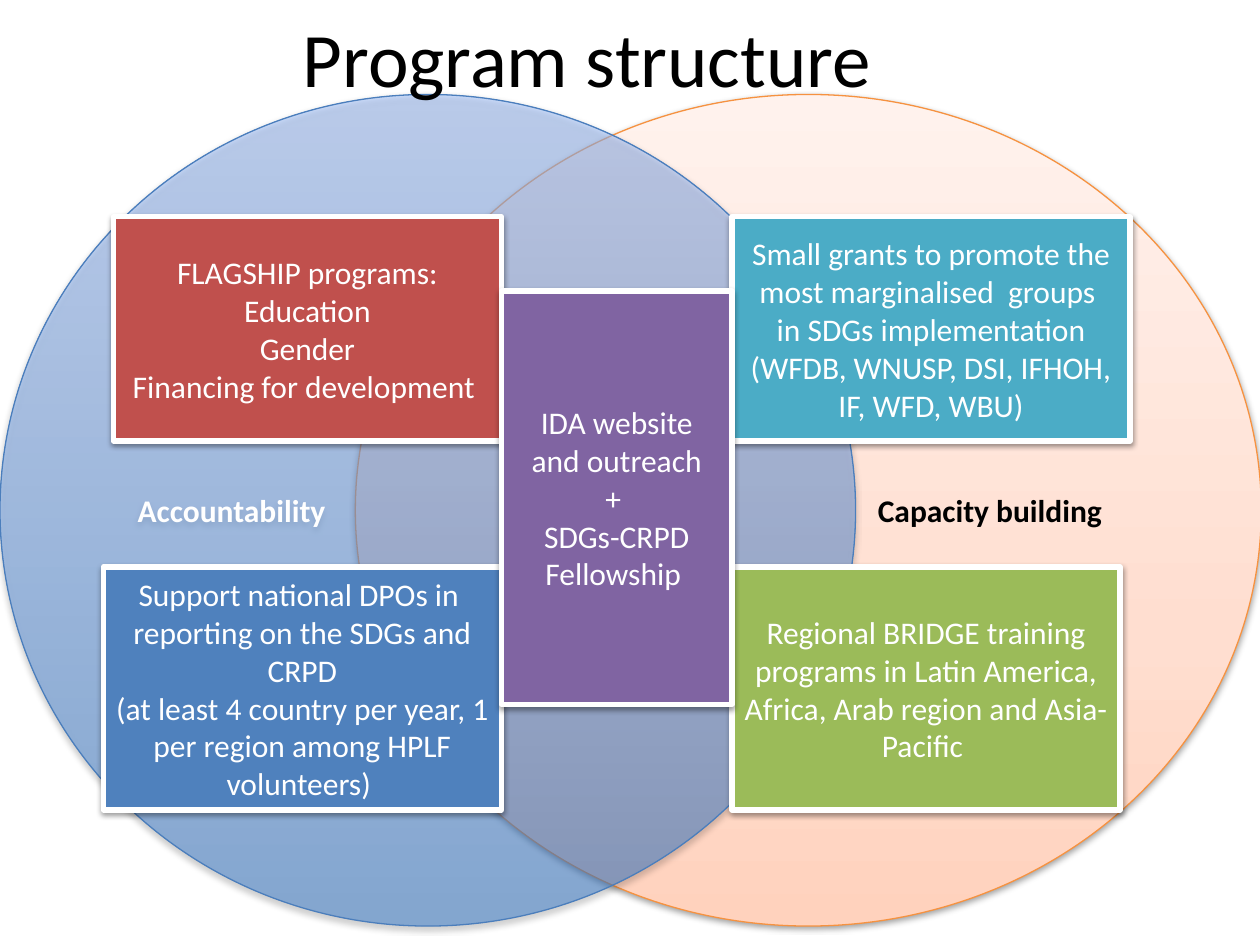
"""Builds the program structure slide: two overlapping circles and five boxes."""
import pptx
import pptx.dml.color
import pptx.enum.shapes
import pptx.enum.text
import pptx.oxml.ns
import pptx.util
from lxml import etree

RGB = pptx.dml.color.RGBColor
SHAPE = pptx.enum.shapes.MSO_SHAPE
ALIGN = pptx.enum.text.PP_ALIGN
qn = pptx.oxml.ns.qn

PX = 9144
FONT = "Calibri"
BLACK = RGB(0x00, 0x00, 0x00)
WHITE = RGB(0xFF, 0xFF, 0xFF)
RED = RGB(0xC0, 0x50, 0x4D)
TEAL = RGB(0x4B, 0xAC, 0xC6)
GREEN = RGB(0x9B, 0xBB, 0x59)
BLUE = RGB(0x4F, 0x81, 0xBD)
PURPLE = RGB(0x80, 0x64, 0xA2)
ORANGE_LINE = RGB(0xF6, 0x92, 0x40)
BLUE_LINE = RGB(0x4B, 0x7E, 0xBC)
PEACH_STOPS = [(0, RGB(0xFF, 0xD2, 0xBD)), (35, RGB(0xFF, 0xDE, 0xD0)),
               (100, RGB(0xFF, 0xF2, 0xED))]
BLUE_STOPS = [(0, RGB(0x3F, 0x80, 0xCE)), (100, RGB(0xA4, 0xC4, 0xFF))]


class Deck:
    """Holds the style and the current slide."""

    def __init__(self, width, height):
        self.prs = pptx.Presentation()
        self.prs.slide_width = width * PX
        self.prs.slide_height = height * PX
        self.s = self.prs.slides.add_slide(self.prs.slide_layouts[6])

    def text(self, sp, lines, size, color, align, bold=False):
        tf = sp.text_frame
        tf.word_wrap = True
        tf.vertical_anchor = pptx.enum.text.MSO_ANCHOR.MIDDLE
        for i, line in enumerate(lines):
            p = tf.paragraphs[0] if i == 0 else tf.add_paragraph()
            p.alignment = align
            r = p.add_run()
            r.text = line
            r.font.name = FONT
            r.font.size = pptx.util.Pt(size)
            r.font.bold = bold
            r.font.color.rgb = color

    def shape(self, kind, at, line, weight, shadow_alpha, shadow_dist):
        sp = self.s.shapes.add_shape(kind, *(v * PX for v in at))
        sp.line.color.rgb = line
        sp.line.width = pptx.util.Pt(weight)
        sp.shadow.inherit = False
        effects = sp._element.spPr.find(qn("a:effectLst"))
        shadow = etree.SubElement(
            effects, qn("a:outerShdw"), blurRad=str(pptx.util.Pt(3.1)),
            dist=str(pptx.util.Pt(shadow_dist)), dir="5400000", rotWithShape="0")
        self.color(shadow, BLACK, shadow_alpha)
        return sp

    def color(self, parent, rgb, alpha):
        clr = etree.SubElement(parent, qn("a:srgbClr"), val=str(rgb))
        if alpha < 100:
            etree.SubElement(clr, qn("a:alpha"), val=str(alpha * 1000))

    def circle(self, at, stops, alpha, line, shadow, label, color, align):
        sp = self.shape(SHAPE.OVAL, at, line, 0.75, *shadow)
        sp.fill.gradient()
        sp.fill.gradient_angle = 90
        stop_list = sp._element.spPr.find(".//" + qn("a:gsLst"))
        stop_list.clear()
        for pos, rgb in stops:
            stop = etree.SubElement(stop_list, qn("a:gs"), pos=str(pos * 1000))
            self.color(stop, rgb, alpha)
        self.text(sp, [label], 18, color, align, bold=True)
        return sp

    def box(self, at, fill, lines):
        sp = self.shape(SHAPE.RECTANGLE, at, WHITE, 3, 38, 1.6)
        sp.fill.solid()
        sp.fill.fore_color.rgb = fill
        self.text(sp, lines, 18, WHITE, ALIGN.CENTER)

    def title(self, at, text):
        sp = self.s.shapes.add_textbox(*(v * PX for v in at))
        self.text(sp, [text], 44, BLACK, ALIGN.CENTER)


def main():
    deck = Deck(1000, 750)
    capacity = deck.circle((282, 75, 719, 660), PEACH_STOPS, 100, ORANGE_LINE,
                           (38, 1.6), "Capacity building", BLACK, ALIGN.RIGHT)
    capacity.text_frame.margin_right = 21 * PX
    deck.circle((0, 75, 679, 660), BLUE_STOPS, 52, BLUE_LINE,
                (35, 1.8), "Accountability", WHITE, ALIGN.LEFT)
    deck.title((23, 0, 900, 90), "Program structure ")

    left, right, top, bottom = 398, 581, 172, 450
    narrow, wide, upper, lower = 308, 316, 178, 193
    deck.box((left - narrow, top, narrow, upper), RED, [
        "FLAGSHIP programs:", "Education", "Gender",
        "Financing for development "])
    deck.box((right, top, wide, upper), TEAL, [
        "Small grants to promote the most marginalised  groups  in SDGs implementation",
        "(WFDB, WNUSP, DSI, IFHOH, IF, WFD, WBU)"])
    deck.box((right, bottom, narrow, lower), GREEN, [
        "Regional BRIDGE training programs in Latin America, "
        "Africa, Arab region and Asia-Pacific "])
    deck.box((left - wide, bottom, wide, lower), BLUE, [
        "Support national DPOs in  reporting on the SDGs and CRPD",
        "(at least 4 country per year, 1 per region among HPLF volunteers) "])
    deck.box((left, 231, right - left, 328), PURPLE, [
        "IDA website and outreach", "+ ", "SDGs-CRPD", "Fellowship "])
    deck.prs.save("out.pptx")


if __name__ == "__main__":
    main()
